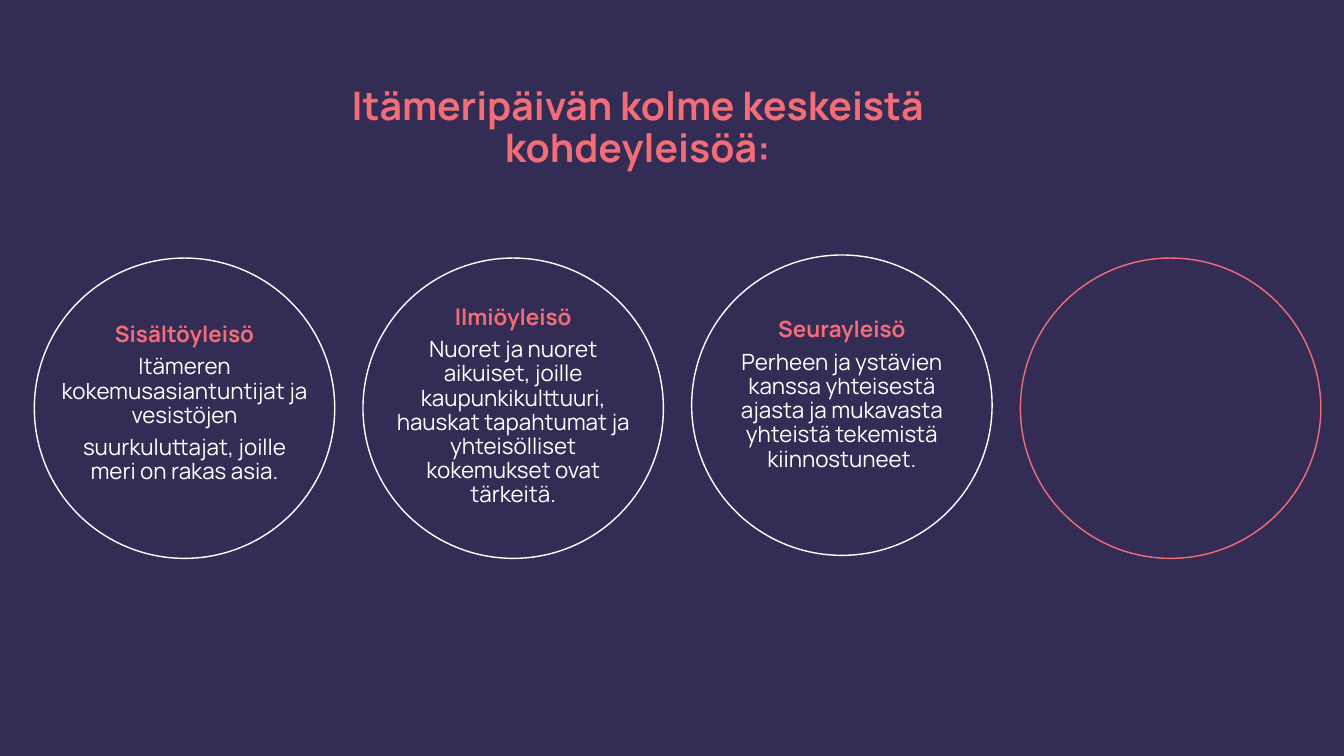
from dataclasses import dataclass

from pptx import Presentation
from pptx.dml.color import RGBColor
from pptx.enum.shapes import MSO_SHAPE
from pptx.enum.text import MSO_ANCHOR, MSO_AUTO_SIZE, PP_ALIGN
from pptx.util import Inches, Pt


@dataclass(frozen=True)
class Theme:
    """Colours, font and type sizes of the slide."""
    background: RGBColor = RGBColor(0x33, 0x2C, 0x54)
    accent: RGBColor = RGBColor(0xF2, 0x6D, 0x77)
    light: RGBColor = RGBColor(0xFF, 0xFF, 0xFF)
    font: str = "Manrope"
    title_size: int = 28
    text_size: int = 16
    line_spacing: float = 0.9
    space_after: int = 6
    outline: int = 1


@dataclass(frozen=True)
class Audience:
    """One target audience: its text, text box size and circle lift."""
    heading: str
    lines: tuple
    width: float
    height: float
    lift: float = 0


THEME = Theme()
DIAMETER = 2.98
CIRCLE_STEP = 3.26
ROW_LEFT, ROW_TOP = 0.34, 2.56
AUDIENCES = (
    Audience("Sisältöyleisö",
             ("Itämeren kokemusasiantuntijat ja vesistöjen",
              "suurkuluttajat, joille meri on rakas asia."), 2.69, 1.79),
    Audience("llmiöyleisö",
             ("Nuoret ja nuoret aikuiset, joille kaupunkikulttuuri, hauskat "
              "tapahtumat ja yhteisölliset kokemukset ovat tärkeitä.",), 2.72, 2.13),
    Audience("Seurayleisö",
             ("Perheen ja ystävien kanssa yhteisestä ajasta ja mukavasta "
              "yhteistä tekemistä kiinnostuneet.",), 2.36, 1.88, lift=0.03),
)


def write_paragraph(paragraph, text, size, color, bold=False, space_after=0):
    """Write one centred run into a paragraph."""
    paragraph.alignment = PP_ALIGN.CENTER
    paragraph.line_spacing = THEME.line_spacing
    paragraph.space_before = Pt(0)
    paragraph.space_after = Pt(space_after)
    run = paragraph.add_run()
    run.text = text
    run.font.name = THEME.font
    run.font.size = Pt(size)
    run.font.bold = bold
    run.font.color.rgb = color


def place_title(slide, text, left, top, width, height):
    """Move the title placeholder to its box and fill it."""
    title = slide.shapes.title
    title.left, title.top = Inches(left), Inches(top)
    title.width, title.height = Inches(width), Inches(height)
    frame = title.text_frame
    frame.word_wrap = True
    frame.auto_size = MSO_AUTO_SIZE.NONE
    frame.vertical_anchor = MSO_ANCHOR.TOP
    write_paragraph(frame.paragraphs[0], text, THEME.title_size, THEME.accent, bold=True)


def add_circle(slide, left, top, color):
    """Add an unfilled circle with a thin outline."""
    circle = slide.shapes.add_shape(
        MSO_SHAPE.OVAL, Inches(left), Inches(top), Inches(DIAMETER), Inches(DIAMETER))
    circle.shadow.inherit = False
    circle.fill.background()
    circle.line.color.rgb = color
    circle.line.width = Pt(THEME.outline)


def add_audience(slide, audience, left, top):
    """Add an audience text centred in the circle slot, and its circle."""
    box = slide.shapes.add_textbox(
        Inches(left + (DIAMETER - audience.width) / 2),
        Inches(top + (DIAMETER - audience.height) / 2),
        Inches(audience.width), Inches(audience.height))
    frame = box.text_frame
    frame.word_wrap = True
    frame.auto_size = MSO_AUTO_SIZE.SHAPE_TO_FIT_TEXT
    write_paragraph(frame.paragraphs[0], audience.heading, THEME.text_size,
                    THEME.accent, bold=True, space_after=THEME.space_after)
    for line in audience.lines:
        write_paragraph(frame.add_paragraph(), line, THEME.text_size,
                        THEME.light, space_after=THEME.space_after)
    add_circle(slide, left, top - audience.lift, THEME.light)


def add_audience_row(slide, left, top):
    """Add the audiences in equal steps, followed by an empty accent circle."""
    for index, audience in enumerate(AUDIENCES):
        add_audience(slide, audience, left + index * CIRCLE_STEP, top)
    add_circle(slide, left + len(AUDIENCES) * CIRCLE_STEP, top, THEME.accent)


def main():
    """Build the slide and save it."""
    presentation = Presentation()
    presentation.slide_width, presentation.slide_height = Inches(13.33), Inches(7.5)
    slide = presentation.slides.add_slide(presentation.slide_layouts[5])
    slide.background.fill.solid()
    slide.background.fill.fore_color.rgb = THEME.background
    place_title(slide, "Itämeripäivän kolme keskeistä kohdeyleisöä:", 2.74, 0.81, 7.17, 1.15)
    add_audience_row(slide, ROW_LEFT, ROW_TOP)
    presentation.save("out.pptx")


if __name__ == "__main__":
    main()
